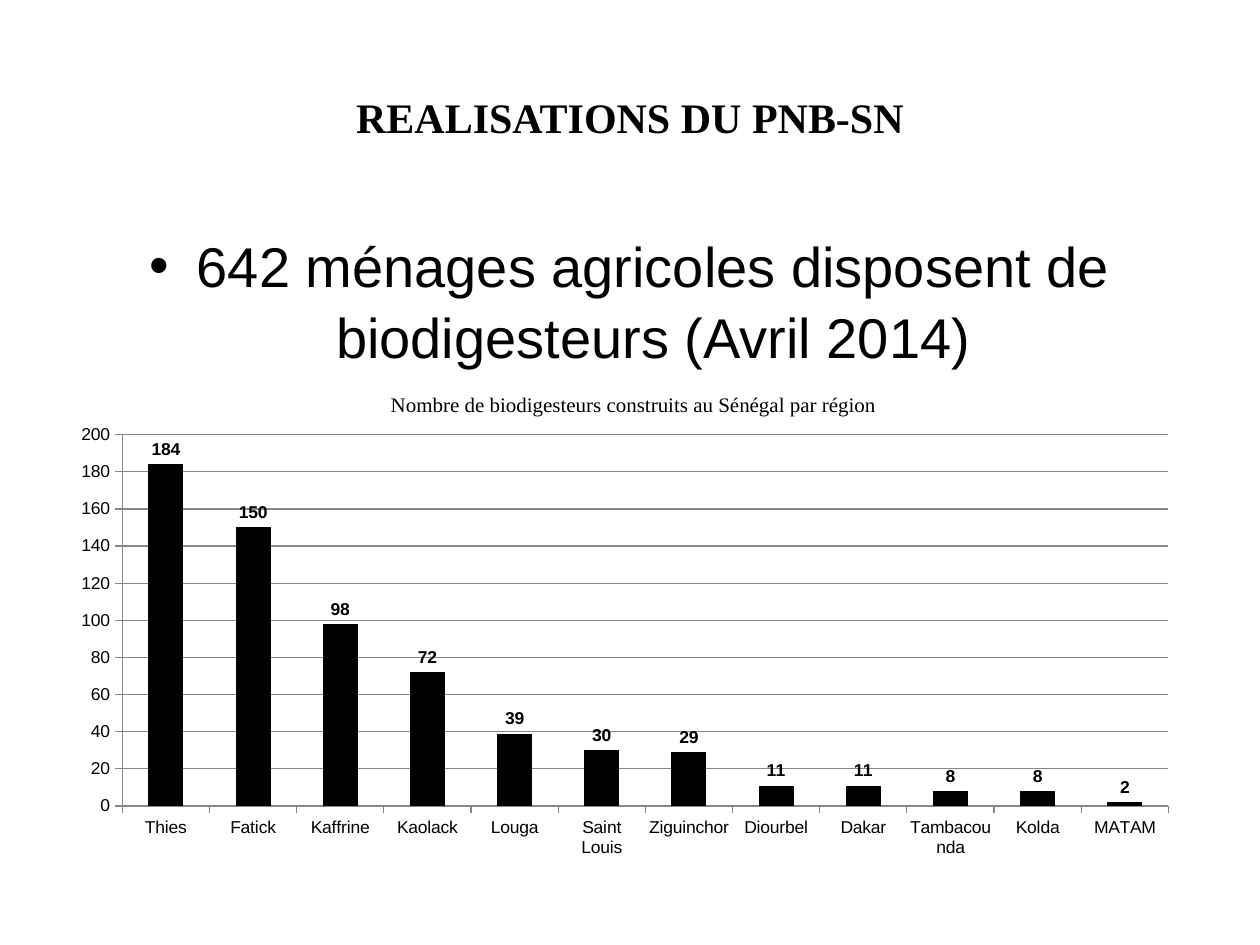
from dataclasses import dataclass

from lxml.etree import SubElement
from pptx import Presentation
from pptx.chart.data import CategoryChartData
from pptx.dml.color import RGBColor
from pptx.enum.chart import XL_CHART_TYPE as ChartType, XL_LABEL_POSITION as LabelPos, XL_TICK_MARK as Tick
from pptx.enum.text import MSO_ANCHOR as Anchor, PP_ALIGN as Align
from pptx.oxml.ns import qn
from pptx.util import Pt

EMU_PER_PX = 914400 / 126
BLACK, GRAY = "000000", "878787"


@dataclass
class Box:
    left: int
    top: int
    width: int
    height: int

    def emu(self) -> tuple[int, ...]:
        return tuple(map(px, (self.left, self.top, self.width, self.height)))


@dataclass
class Region:
    name: str
    count: int


REGIONS = [
    Region("Thies", 184), Region("Fatick", 150), Region("Kaffrine", 98),
    Region("Kaolack", 72), Region("Louga", 39), Region("Saint Louis", 30),
    Region("Ziguinchor", 29), Region("Diourbel", 11), Region("Dakar", 11),
    Region("Tambacounda", 8), Region("Kolda", 8), Region("MATAM", 2),
]


def px(n: float) -> int:
    return round(n * EMU_PER_PX)


def color(value: str) -> RGBColor:
    return RGBColor.from_string(value)


def set_font(font, size: int, name: str = "Arial", bold: bool = False) -> None:
    font.size, font.name, font.bold = Pt(size), name, bold
    font.color.rgb = color(BLACK)


def add_text(slide, box: Box, text: str, *, size: int, name: str = "Arial", bold: bool = False,
             anchor=Anchor.TOP, bullet: str = "", indent: int = 0, spacing: float = 1.0) -> None:
    tf = slide.shapes.add_textbox(*box.emu()).text_frame
    tf.word_wrap = True
    tf.vertical_anchor = anchor
    p = tf.paragraphs[0]
    p.alignment, p.line_spacing = Align.CENTER, spacing
    r = p.add_run()
    r.text = text
    set_font(r.font, size, name, bold)
    if bullet:
        ppr = p._p.get_or_add_pPr()
        ppr.set("marL", str(px(indent)))
        ppr.set("indent", str(-px(indent)))
        SubElement(ppr, qn("a:buFont"), typeface=name)
        SubElement(ppr, qn("a:buChar"), char=bullet)


def set_layout(parent, **fractions: float) -> None:
    layout = parent.find(qn("c:layout"))
    if layout is None:
        layout = SubElement(parent, qn("c:layout"))
        position = 1 if parent.find(qn("c:tx")) is not None else 0
        parent.insert(position, layout)
    manual = SubElement(layout, qn("c:manualLayout"))
    if "w" in fractions:
        SubElement(manual, qn("c:layoutTarget"), val="inner")
    for key in ("x", "y"):
        SubElement(manual, qn(f"c:{key}Mode"), val="edge")
    for key, value in fractions.items():
        SubElement(manual, qn(f"c:{key}"), val=str(value))


def style_axis(axis) -> None:
    axis.major_tick_mark, axis.minor_tick_mark = Tick.OUTSIDE, Tick.NONE
    axis.format.line.color.rgb = color(GRAY)
    set_font(axis.tick_labels.font, 10)
    axis._element.find(qn("c:txPr")).find(qn("a:bodyPr")).set("rot", "0")


def add_region_chart(slide, box: Box, title: str, regions: list[Region]) -> None:
    data = CategoryChartData()
    data.categories = [region.name for region in regions]
    data.add_series("Series 1", [region.count for region in regions])
    chart = slide.shapes.add_chart(ChartType.COLUMN_CLUSTERED, *box.emu(), data).chart
    chart.has_legend = False
    set_font(chart.font, 10)

    chart.has_title = True
    r = chart.chart_title.text_frame.paragraphs[0].add_run()
    r.text = title
    set_font(r.font, 12, "Times New Roman")
    set_layout(chart.chart_title._element, x=0.29, y=0.05)

    for axis in (chart.category_axis, chart.value_axis):
        style_axis(axis)
    values = chart.value_axis
    values.minimum_scale, values.maximum_scale, values.major_unit = 0, 200, 20
    values.has_major_gridlines = True
    values.major_gridlines.format.line.color.rgb = color(GRAY)

    plot = chart.plots[0]
    plot.gap_width = 150
    plot.vary_by_categories = False
    fill = plot.series[0].format.fill
    fill.solid()
    fill.fore_color.rgb = color(BLACK)
    plot.has_data_labels = True
    labels = plot.data_labels
    labels.show_value, labels.position = True, LabelPos.OUTSIDE_END
    set_font(labels.font, 10, bold=True)
    set_layout(chart._chartSpace.chart.plotArea, x=0.056, y=0.146, w=0.925, h=0.767)


def main() -> None:
    """Build the slide on biodigesters by region."""
    prs = Presentation()
    prs.slide_width, prs.slide_height = px(1260), px(945)
    slide = prs.slides.add_slide(prs.slide_layouts[6])
    add_text(slide, Box(63, 38, 1134, 158), "REALISATIONS DU PNB-SN",
             size=24, name="Times New Roman", bold=True, anchor=Anchor.MIDDLE)
    add_text(slide, Box(63, 221, 1134, 624),
             "642 ménages agricoles disposent de biodigesteurs (Avril 2014)",
             size=32, bullet="•", indent=47, spacing=1.06)
    add_region_chart(slide, Box(59, 364, 1131, 493),
                     "Nombre de biodigesteurs construits au Sénégal par région", REGIONS)
    prs.save("out.pptx")


if __name__ == "__main__":
    main()
